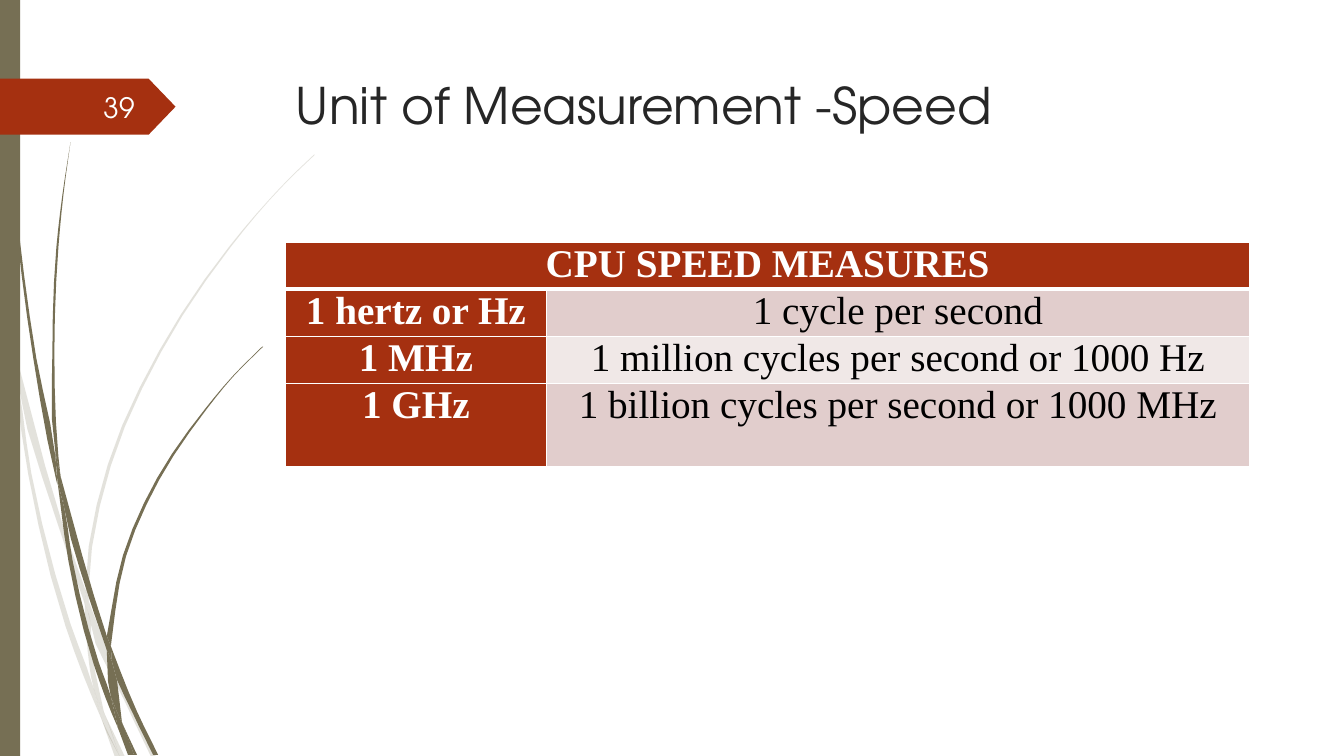
from math import dist

from lxml import etree
from pptx import Presentation
from pptx.dml.color import RGBColor
from pptx.enum import shapes, text
from pptx.oxml import ns
from pptx.util import Pt

OLIVE = RGBColor(0x76, 0x6F, 0x54)
RUST = RGBColor(0xA5, 0x30, 0x10)
ROSE = RGBColor(0xE1, 0xCD, 0xCC)
PALE_ROSE = RGBColor(0xF0, 0xE8, 0xE7)
CHARCOAL = RGBColor(0x26, 0x26, 0x26)
WHITE = RGBColor(0xFF, 0xFF, 0xFF)
OFF_WHITE = RGBColor(0xFE, 0xFF, 0xFF)
BLACK = RGBColor(0, 0, 0)
HEADING_FONT = "TeX Gyre Adventor"
TABLE_FONT = "Times New Roman"

GRID = 0.72
STEPS = 3

PALE_BLADES = [
    ([(0, 299), (10, 344), (11, 350)], [(0, 282), (9, 322), (11, 350)]),
    ([(14, 345), (17, 376), (58, 522), (84, 599)], [(14, 345), (62, 520), (85, 586)]),
    ([(88, 596), (88, 610), (123, 694), (150, 751)],
     [(88, 596), (92, 607), (127, 692), (155, 751)]),
    ([(105, 711), (119, 751)], [(105, 711), (124, 751)]),
    ([(11, 350), (28, 470), (65, 621), (92, 693), (101, 714)],
     [(11, 350), (17, 376), (31, 469), (70, 619), (93, 683), (99, 707)]),
    ([(84, 599), (87, 646), (93, 683), (96, 692), (105, 711)],
     [(84, 599), (88, 608), (91, 646), (103, 706)]),
    ([(312, 153), (289, 175), (268, 197), (228, 244), (158, 348), (107, 461),
      (85, 584), (85, 586)],
     [(312, 154), (290, 175), (268, 198), (229, 245), (160, 349), (110, 462),
      (88, 584), (88, 596)]),
    ([(101, 714), (114, 751)], [(101, 714), (119, 751)]),
    ([(85, 586), (84, 599), (88, 608)], [(85, 586), (88, 596), (88, 610)]),
    ([(93, 683), (99, 707), (101, 714), (119, 751)],
     [(93, 683), (96, 692), (105, 711), (119, 751)]),
]
DARK_BLADES = [
    ([(3, 0), (4, 48), (7, 110), (17, 233), (33, 355), (56, 477), (57, 481)],
     [(4, 0), (5, 48), (8, 109), (19, 232), (36, 355), (55, 453), (57, 481)]),
    ([(60, 472), (64, 505), (88, 592), (106, 645)], [(60, 472), (93, 590), (106, 631)]),
    ([(110, 641), (111, 656), (132, 708), (152, 749)],
     [(110, 641), (113, 649), (136, 706), (157, 749)]),
    ([(57, 477), (68, 557), (93, 659), (111, 708), (117, 722)],
     [(57, 477), (64, 505), (72, 556), (98, 657), (110, 691), (116, 717)]),
    ([(70, 141), (62, 193), (56, 245), (52, 349), (55, 449), (60, 472)],
     [(70, 141), (63, 193), (58, 245), (54, 349), (58, 453), (60, 472)]),
    ([(122, 719), (133, 749)], [(122, 719), (136, 749)]),
    ([(55, 449), (55, 453), (57, 477), (64, 505)], [(55, 449), (60, 472), (64, 505)]),
    ([(260, 344), (231, 373), (204, 405), (156, 474), (122, 551), (106, 631)],
     [(261, 344), (231, 374), (205, 406), (158, 476), (125, 552), (111, 633), (110, 641)]),
    ([(117, 722), (127, 749)], [(117, 722), (131, 749)]),
    ([(106, 645), (110, 691), (116, 706), (122, 719)],
     [(106, 645), (111, 656), (121, 716)]),
    ([(106, 631), (106, 645), (111, 656)], [(106, 631), (110, 641), (111, 656)]),
    ([(110, 691), (116, 717), (117, 722), (130, 749)],
     [(110, 691), (116, 706), (122, 719), (133, 749)]),
]
SPEEDS = [
    ("1 hertz or Hz", "1 cycle per second"),
    ("1 MHz", "1 million cycles per second or 1000 Hz"),
    ("1 GHz", "1 billion cycles per second or 1000 MHz"),
]


def tangent(before, knot, after):
    """Return the direction of the curve at a knot, allowing for uneven gaps."""
    near, far = dist(before, knot), dist(knot, after)
    return [((k - b) * far / near + (a - k) * near / far) / (near + far)
            for b, k, a in zip(before, knot, after)]


def smooth_edge(knots):
    """Return points on a smooth curve through the knots."""
    first, *_, last = slopes = [None] + [
        tangent(*three) for three in zip(knots, knots[1:], knots[2:])] + [None]
    points = []
    for i, (start, end) in enumerate(zip(knots, knots[1:])):
        gap = dist(start, end)
        chord = [(e - s) / gap for s, e in zip(start, end)]
        leave, arrive = slopes[i] or chord, slopes[i + 1] or chord
        steps = STEPS if gap > 30 else 1
        for t in (step / steps for step in range(steps)):
            points.append(tuple(
                s + (e - s) * t * t * (3 - 2 * t)
                + gap * t * (1 - t) * (m * (1 - t) - n * t)
                for s, e, m, n in zip(start, end, leave, arrive)))
    return points + [knots[-1]]


def paint(shape, color):
    """Give a shape a plain fill without line or shadow."""
    shape.shadow.inherit = False
    shape.fill.solid()
    shape.fill.fore_color.rgb = color
    shape.line.fill.background()


def write(frame, words, font, size, color, align, bold=False):
    """Write one formatted paragraph in a text frame."""
    line = frame.paragraphs[0]
    line.text = words
    line.alignment = align
    line.font.name, line.font.size, line.font.bold = font, Pt(size), bold
    line.font.color.rgb = color
    return line


def add_grass(slide, left, top, blades, alpha=None):
    """Draw tapered blades of grass from their two edges."""
    for left_edge, right_edge in blades:
        outline = smooth_edge(left_edge) + smooth_edge(right_edge)[::-1]
        outline = [((left + x * GRID) * 100, (top + y * GRID) * 100) for x, y in outline]
        builder = slide.shapes.build_freeform(*outline[0], scale=Pt(0.01))
        builder.add_line_segments(outline[1:], close=True)
        blade = builder.convert_to_shape()
        paint(blade, OLIVE)
        if alpha:
            tint = blade.fill._xPr.find(".//" + ns.qn("a:srgbClr"))
            etree.SubElement(tint, ns.qn("a:alpha")).set("val", str(alpha * 1000))


def add_sidebar(slide, left, top, width, height):
    """Draw the grass, the side bar and the page tag."""
    add_grass(slide, left, top, PALE_BLADES, alpha=20)
    add_grass(slide, left, top, DARK_BLADES)
    bar = slide.shapes.add_shape(
        shapes.MSO_SHAPE.RECTANGLE, Pt(left), Pt(top), Pt(width), Pt(height))
    paint(bar, OLIVE)
    tag = slide.shapes.add_shape(
        shapes.MSO_SHAPE.PENTAGON, Pt(left), Pt(top + 56.2), Pt(125.4), Pt(40))
    tag.adjustments[0] = 0.48
    paint(tag, RUST)
    page = slide.shapes.add_textbox(Pt(left + 41.8), Pt(top + 62), Pt(61.4), Pt(28.8))
    page.text_frame.word_wrap = True
    page.text_frame.vertical_anchor = text.MSO_ANCHOR.MIDDLE
    write(page.text_frame, "39", HEADING_FONT, 20, OFF_WHITE, text.PP_ALIGN.RIGHT)


def add_title(slide, left, top, width, height):
    """Place the slide title."""
    title = slide.shapes.add_textbox(Pt(left), Pt(top), Pt(width), Pt(height))
    title.text_frame.word_wrap = True
    write(title.text_frame, "Unit of Measurement -Speed", HEADING_FONT, 36, CHARCOAL,
          text.PP_ALIGN.LEFT)


def style_cell(cell, words, fill, color, bold, edges):
    """Fill one table cell and draw its white borders."""
    cell.margin_left = cell.margin_right = Pt(5.4)
    cell.margin_top = cell.margin_bottom = Pt(0)
    write(cell.text_frame, words, TABLE_FONT, 28, color, text.PP_ALIGN.CENTER, bold)
    properties = cell._tc.get_or_add_tcPr()
    for side, weight in edges.items():
        border = etree.SubElement(properties, ns.qn("a:ln" + side), w=str(Pt(weight)))
        solid = etree.SubElement(border, ns.qn("a:solidFill"))
        etree.SubElement(solid, ns.qn("a:srgbClr"), val=str(WHITE))
    cell.fill.solid()
    cell.fill.fore_color.rgb = fill


def add_speed_table(slide, left, top, column_widths, row_heights):
    """Build the table of CPU speed measures."""
    table = slide.shapes.add_table(
        len(row_heights), len(column_widths), Pt(left), Pt(top),
        Pt(sum(column_widths)), Pt(sum(row_heights))).table
    for column, width in zip(table.columns, column_widths):
        column.width = Pt(width)
    for row, height in zip(table.rows, row_heights):
        row.height = Pt(height)
    table.cell(0, 0).merge(table.cell(0, 1))
    for r, labels in enumerate([("CPU SPEED MEASURES", ""), *SPEEDS]):
        edges = {"L": 1, "R": 1, "T": 3 if r == 1 else 1, "B": 3 if r == 0 else 1}
        for c, words in enumerate(labels):
            heading = r == 0 or c == 0
            fill = RUST if heading else ROSE if r % 2 else PALE_ROSE
            style_cell(table.cell(r, c), words, fill, WHITE if heading else BLACK,
                       heading, edges)


def main():
    """Build and save the slide."""
    deck = Presentation()
    deck.slide_width, deck.slide_height = Pt(960), Pt(540)
    slide = deck.slides.add_slide(deck.slide_layouts[6])
    add_sidebar(slide, 0, 0, 14.4, 540)
    add_title(slide, 204, 49.4, 702, 100.8)
    add_speed_table(slide, 204, 173, (186.2, 502.3), (28.8, 20.9, 19.4, 59))
    deck.save("out.pptx")


if __name__ == "__main__":
    main()
